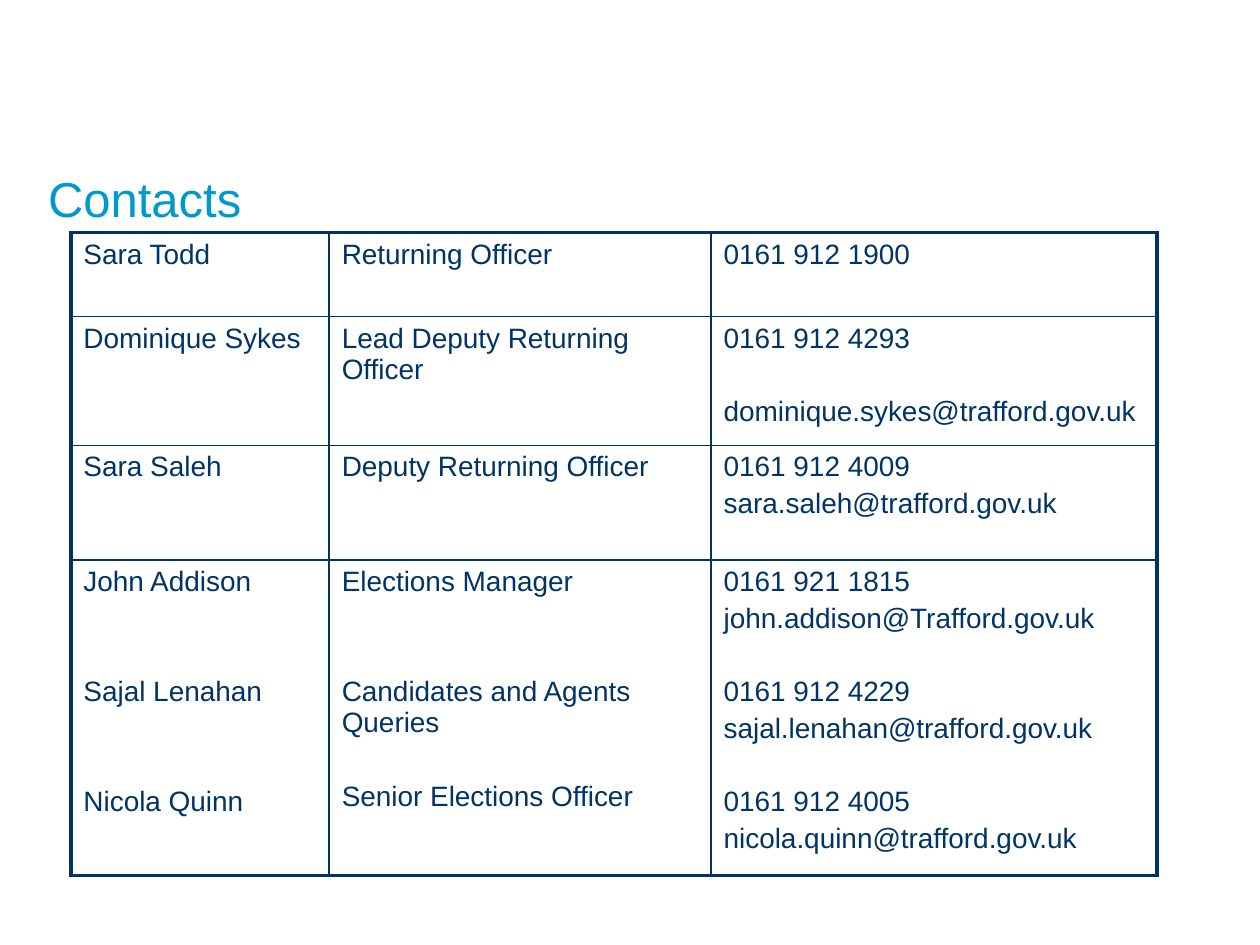
from pptx import Presentation
from pptx.dml.color import RGBColor
from pptx.oxml.ns import qn
from pptx.util import Pt
from lxml.etree import SubElement

NAVY, BLUE = "003366", "0099CC"
LINE, GAP = 17.8, 3.2
COLS = [147.6, 218.2, 254.9]
ROWS = [
    (48, ["Sara Todd"], ["Returning Officer"], ["0161 912 1900"]),
    (73.5, ["Dominique Sykes"], ["Lead Deputy Returning Officer"],
     ["0161 912 4293", (1, "dominique.sykes@trafford.gov.uk")]),
    (65.5, ["Sara Saleh"], ["Deputy Returning Officer"],
     ["0161 912 4009", "sara.saleh@trafford.gov.uk"]),
    (172, ["John Addison", (2, "Sajal Lenahan"), (2, "Nicola Quinn")],
     ["Elections Manager", (2, "Candidates and Agents Queries"),
      (1, "Senior Elections Officer")],
     ["0161 921 1815", "john.addison@Trafford.gov.uk",
      (1, "0161 912 4229"), "sajal.lenahan@trafford.gov.uk",
      (1, "0161 912 4005"), "nicola.quinn@trafford.gov.uk"]),
]


def color(code):
    """Turn a hex string into a colour."""
    return RGBColor.from_string(code)


def add_run(para, text, size, code):
    """Add one styled run to a paragraph."""
    run = para.add_run()
    run.text = text
    run.font.name = "Arial"
    run.font.size = Pt(size)
    run.font.color.rgb = color(code)


def add_title(slide, text, left, top, width, height):
    """Place the title in its box."""
    frame = slide.shapes.add_textbox(Pt(left), Pt(top), Pt(width), Pt(height)).text_frame
    frame.word_wrap = True
    frame.margin_left = frame.margin_top = frame.margin_right = frame.margin_bottom = 0
    add_run(frame.paragraphs[0], text, 28, BLUE)


def add_edge(cell, side, width):
    """Draw one side of a cell's border."""
    edge = SubElement(cell._tc.get_or_add_tcPr(), qn(f"a:{side}"), w=str(Pt(width)))
    fill = SubElement(edge, qn("a:solidFill"))
    SubElement(fill, qn("a:srgbClr"), val=NAVY)


def fill_cell(cell, items):
    """Write the lines of a cell, each with its count of skipped lines."""
    frame = cell.text_frame
    for num, item in enumerate(items):
        skip, text = item if isinstance(item, tuple) else (0, item)
        para = frame.add_paragraph() if num else frame.paragraphs[0]
        if num:
            para.space_before = Pt(round(GAP + skip * (LINE + GAP), 2))
        add_run(para, text, 16, NAVY)


def add_grid(slide, left, top, cols, rows):
    """Place the table of contacts with a heavy outer frame."""
    high = sum(row[0] for row in rows)
    shape = slide.shapes.add_table(len(rows), len(cols), Pt(left), Pt(top), Pt(sum(cols)), Pt(high))
    table = shape.table
    table.first_row = table.horz_banding = False
    for col, width in zip(table.columns, cols):
        col.width = Pt(width)
    for r, (height, *texts) in enumerate(rows):
        table.rows[r].height = Pt(height)
        for c, items in enumerate(texts):
            cell = table.cell(r, c)
            cell.margin_left = cell.margin_right = Pt(7.2)
            cell.margin_top = cell.margin_bottom = Pt(3.6)
            fill_cell(cell, items)
            outer = {"lnL": c == 0, "lnR": c == len(cols) - 1,
                     "lnT": r == 0, "lnB": r == len(rows) - 1}
            for side, heavy in outer.items():
                add_edge(cell, side, 2.25 if heavy else 1)
            cell.fill.background()


def main():
    """Build the slide and save it."""
    deck = Presentation()
    deck.slide_width, deck.slide_height = Pt(720), Pt(540)
    slide = deck.slides.add_slide(deck.slide_layouts[6])
    add_title(slide, "Contacts", 27.5, 96.5, 198, 36)
    add_grid(slide, 40.5, 133, COLS, ROWS)
    deck.save("out.pptx")


if __name__ == "__main__":
    main()
